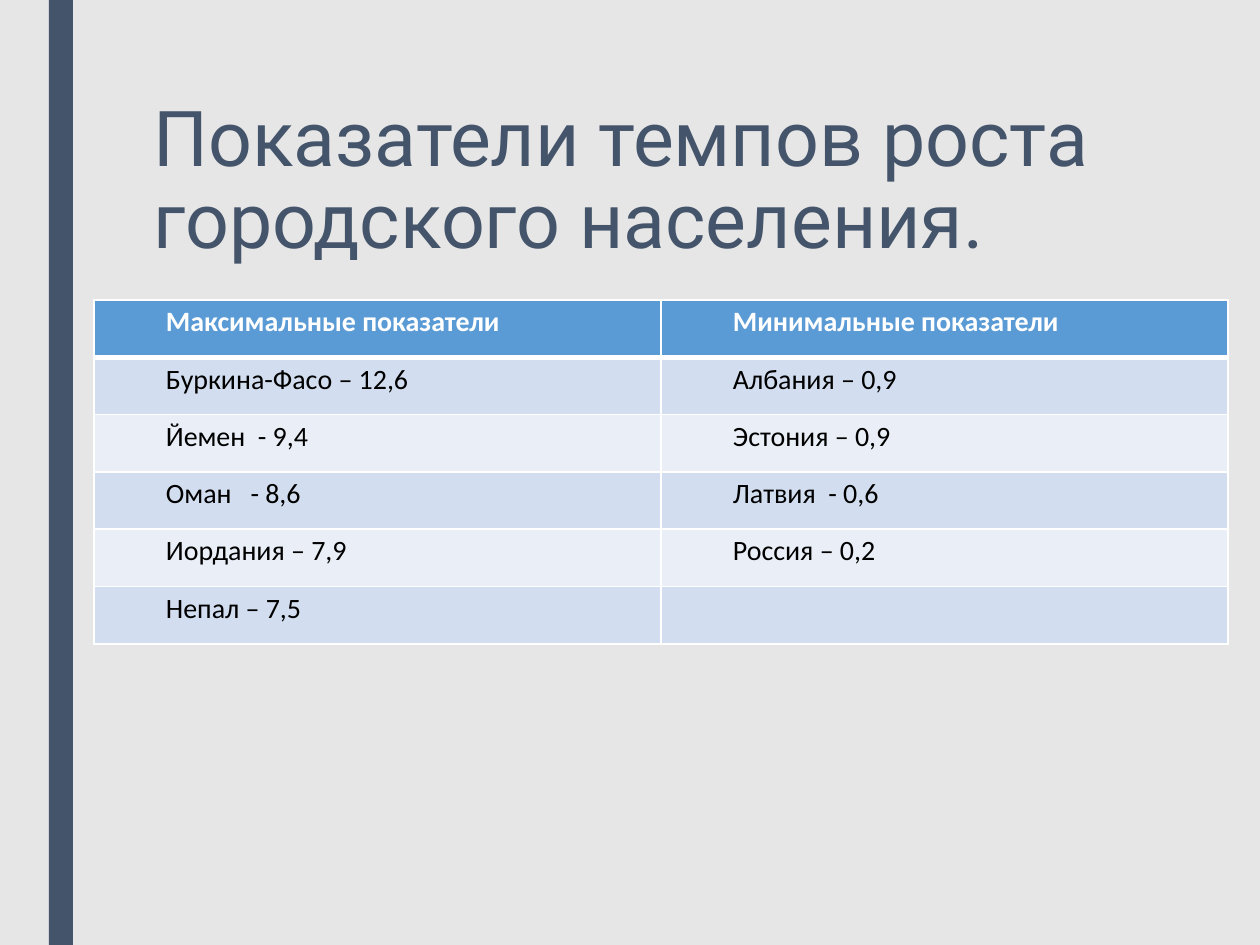
from lxml.etree import SubElement
from pptx import Presentation
from pptx.dml.color import RGBColor
from pptx.enum.shapes import MSO_SHAPE
from pptx.enum.text import MSO_ANCHOR, MSO_AUTO_SIZE, PP_ALIGN
from pptx.oxml.ns import qn
from pptx.util import Emu, Pt

PAPER = RGBColor(0xE7, 0xE6, 0xE6)
SLATE = RGBColor(0x44, 0x54, 0x6A)
BLUE = RGBColor(0x5B, 0x9B, 0xD5)
BANDS = RGBColor(0xD2, 0xDE, 0xEF), RGBColor(0xEA, 0xEF, 0xF7)
WHITE = RGBColor(0xFF, 0xFF, 0xFF)
BLACK = RGBColor(0, 0, 0)

ROWS = [
    ("Максимальные показатели", "Минимальные показатели"),
    ("Буркина-Фасо – 12,6", "Албания – 0,9"),
    ("Йемен  - 9,4", "Эстония – 0,9"),
    ("Оман   - 8,6", "Латвия  - 0,6"),
    ("Иордания – 7,9", "Россия – 0,2"),
    ("Непал – 7,5", ""),
]


def px(size):
    return Emu(round(size * 914400 / 126))


class Deck:
    """Holds the style and the current slide."""

    def __init__(self):
        self.prs = Presentation()
        self.prs.slide_width, self.prs.slide_height = px(1260), px(945)
        self.slide = self.prs.slides.add_slide(self.prs.slide_layouts[5])
        fill = self.slide.background.fill
        fill.solid()
        fill.fore_color.rgb = PAPER

    def text(self, para, words, font, size, color, bold=False):
        run = para.add_run()
        run.text = words
        run.font.name, run.font.size = font, Pt(size)
        run.font.bold = bold
        run.font.color.rgb = color

    def bar(self, *box):
        shape = self.slide.shapes.add_shape(MSO_SHAPE.RECTANGLE, *map(px, box))
        shape.shadow.inherit = False
        shape.fill.solid()
        shape.fill.fore_color.rgb = SLATE
        shape.line.fill.background()

    def title(self, words, *box):
        shape = self.slide.shapes.title
        shape.left, shape.top, shape.width, shape.height = map(px, box)
        frame = shape.text_frame
        frame.word_wrap = True
        frame.auto_size = MSO_AUTO_SIZE.NONE
        frame.vertical_anchor = MSO_ANCHOR.TOP
        para = frame.paragraphs[0]
        para.alignment = PP_ALIGN.LEFT
        para.line_spacing = 0.89
        self.text(para, words, "Roboto", 44, SLATE)

    def edge(self, cell, side, width):
        props = cell._tc.get_or_add_tcPr()
        line = SubElement(props, qn("a:ln" + side), w=str(Pt(width)))
        fill = SubElement(line, qn("a:solidFill"))
        SubElement(fill, qn("a:srgbClr"), val=str(WHITE))

    def cell(self, cell, words, row, col):
        for side in "LRTB":
            thick = (row, side) in ((0, "B"), (1, "T"))
            self.edge(cell, side, 3 if thick else 1)
        cell.fill.solid()
        cell.fill.fore_color.rgb = BANDS[(row - 1) % 2] if row else BLUE
        cell.margin_left = cell.margin_right = px(9)
        cell.margin_top = cell.margin_bottom = 0
        if not words:
            return
        para = cell.text_frame.paragraphs[0]
        para.line_spacing = 1.15
        para.space_after = Pt(10 * col)
        props = para._p.get_or_add_pPr()
        props.set("marL", str(px(63)))
        props.set("indent", "0")
        self.text(para, words, "Calibri", 16, BLACK if row else WHITE, not row)

    def table(self, rows, *box):
        shape = self.slide.shapes.add_table(len(rows), len(rows[0]), *map(px, box))
        for row, line in enumerate(rows):
            for col, words in enumerate(line):
                self.cell(shape.table.cell(row, col), words, row, col)


def main():
    deck = Deck()
    deck.bar(49, 0, 24, 945)
    deck.title("Показатели темпов роста городского населения.", 141, 94, 993, 204)
    deck.table(ROWS, 94, 300, 1134, 344)
    deck.prs.save("out.pptx")


if __name__ == "__main__":
    main()
